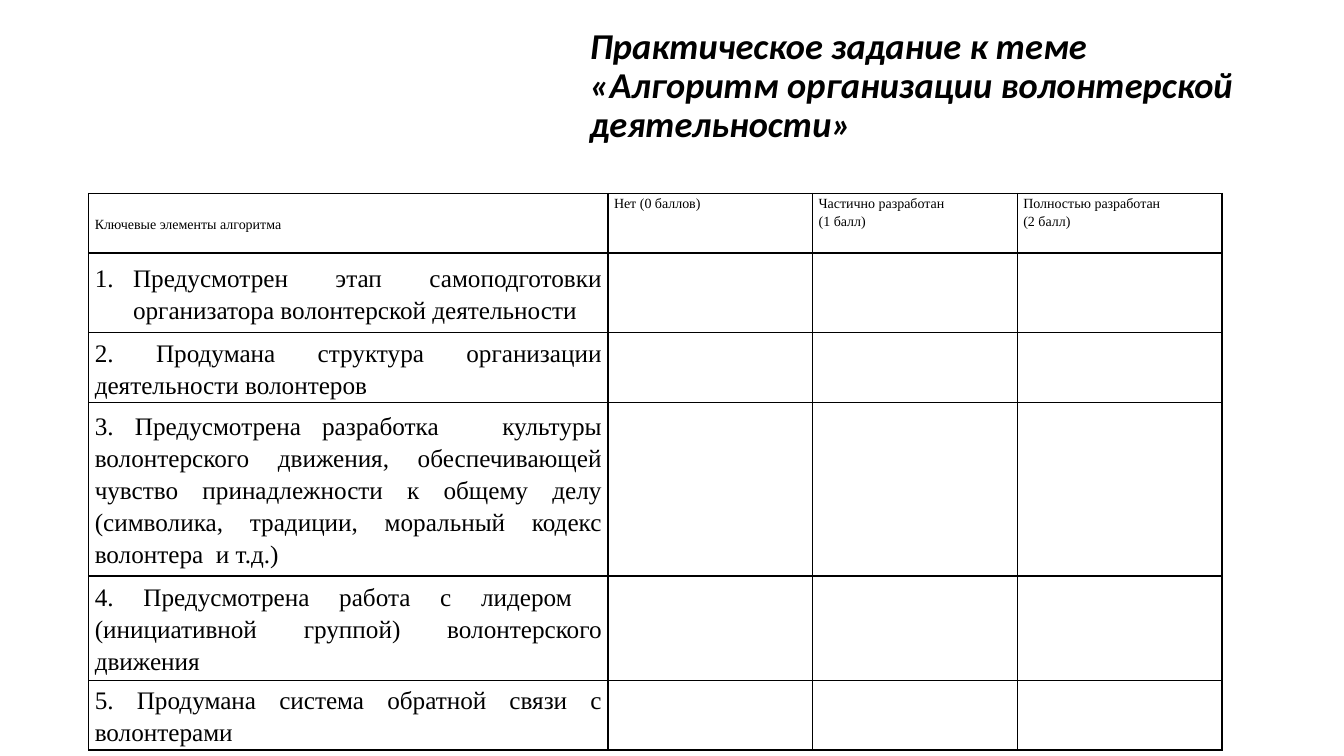
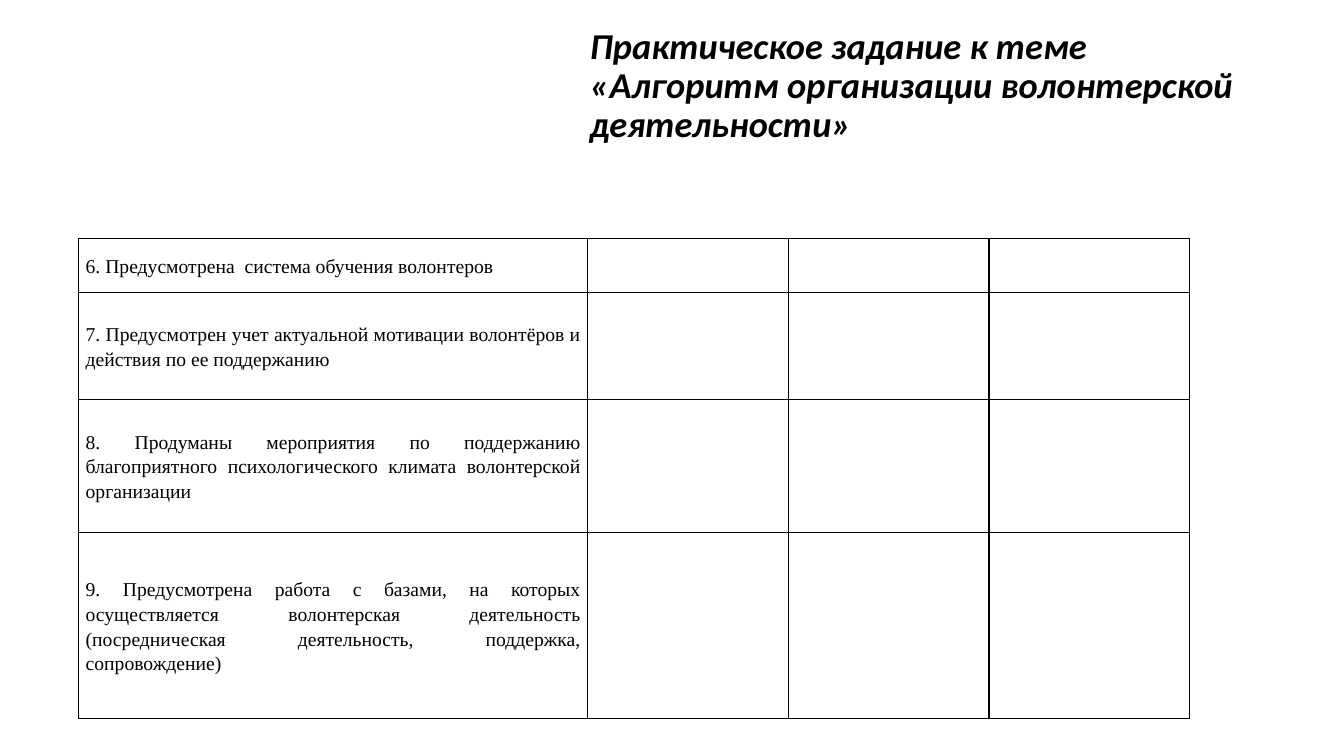
import pptx
import pptx.dml.color
import pptx.enum.text
import pptx.oxml
import pptx.oxml.ns
import pptx.util
from dataclasses import dataclass

Inches = pptx.util.Inches
Pt = pptx.util.Pt
ALIGN = pptx.enum.text.PP_ALIGN
ANCHOR = pptx.enum.text.MSO_ANCHOR


@dataclass(frozen=True)
class Theme:
    ink: str = "000000"
    title_font: str = "Calibri"
    table_font: str = "Times New Roman"
    title_size: int = 26
    header_size: int = 10
    large_size: int = 18
    small_size: int = 14
    title_spacing: float = 0.9
    table_spacing: float = 1.15
    border_width: int = 1


THEME = Theme()
SLIDE_WIDTH, SLIDE_HEIGHT = 13.33, 7.5
ANSWER_COLUMNS = 3
TITLE = "Практическое задание к теме «Алгоритм организации волонтерской деятельности»"
HEADER = [
    "Ключевые элементы алгоритма",
    "Нет (0 баллов)",
    "Частично разработан\n(1 балл)",
    "Полностью разработан\n(2 балл)",
]
FIRST_ITEMS = [
    "Предусмотрен этап самоподготовки организатора волонтерской деятельности",
    "2. Продумана структура организации деятельности волонтеров",
    "3. Предусмотрена разработка   культуры волонтерского движения, обеспечивающей чувство "
    "принадлежности к общему делу (символика, традиции, моральный кодекс волонтера  и т.д.)",
    "4. Предусмотрена работа с лидером  (инициативной группой) волонтерского движения",
    "5. Продумана система обратной связи с волонтерами",
]
LAST_ITEMS = [
    "6. Предусмотрена  система обучения волонтеров",
    "7. Предусмотрен учет актуальной мотивации волонтёров и действия по ее поддержанию",
    "8. Продуманы мероприятия по поддержанию благоприятного психологического климата "
    "волонтерской организации",
    "9. Предусмотрена работа с базами, на которых осуществляется волонтерская деятельность "
    "(посредническая деятельность, поддержка, сопровождение)",
]


def style_text(text_frame, font, size, spacing, align=ALIGN.LEFT, emphasis=False):
    for para in text_frame.paragraphs:
        para.alignment = align
        para.line_spacing = spacing
        for span in para.runs:
            span.font.name = font
            span.font.size = Pt(size)
            span.font.bold = span.font.italic = emphasis
            span.font.color.rgb = pptx.dml.color.RGBColor.from_string(THEME.ink)


def add_title(page):
    box = page.shapes.add_textbox(Inches(0.43 * SLIDE_WIDTH), Inches(0.03 * SLIDE_HEIGHT),
                                  Inches(7), Inches(0.57))
    frame = box.text_frame
    frame.word_wrap = True
    frame.margin_left = Inches(0.12)
    frame.text = TITLE
    style_text(frame, THEME.title_font, THEME.title_size, THEME.title_spacing, emphasis=True)


def add_borders(cell):
    properties = cell._tc.get_or_add_tcPr()
    for side in "LRTB":
        properties.append(pptx.oxml.parse_xml(
            f'<a:ln{side} {pptx.oxml.ns.nsdecls("a")} w="{Pt(THEME.border_width)}">'
            f'<a:solidFill><a:srgbClr val="{THEME.ink}"/></a:solidFill></a:ln{side}>'))


def number_paragraph(para, indent):
    """Give the paragraph an automatic number with a hanging indent."""
    properties = para._p.get_or_add_pPr()
    properties.set("marL", str(Inches(indent)))
    properties.set("indent", str(-Inches(indent)))
    properties.append(pptx.oxml.parse_xml(
        f'<a:buAutoNum {pptx.oxml.ns.nsdecls("a")} type="arabicPeriod"/>'))


def fill_cell(cell, text, size, margin, align=ALIGN.JUSTIFY, anchor=ANCHOR.MIDDLE):
    cell.margin_left = cell.margin_right = Inches(margin)
    cell.margin_top = cell.margin_bottom = 0
    cell.vertical_anchor = anchor
    cell.text_frame.text = text
    style_text(cell.text_frame, THEME.table_font, size, THEME.table_spacing, align)


def add_checklist(page, left, top, item_width, answer_width, heights, items, size, margin,
                  header=()):
    """Add a table with items in the first column and empty answer columns."""
    widths = [item_width] + [answer_width] * ANSWER_COLUMNS
    table = page.shapes.add_table(len(heights), len(widths), Inches(left), Inches(top),
                                  Inches(sum(widths)), Inches(sum(heights))).table
    table.first_row = table.horz_banding = False
    for column, width in zip(table.columns, widths):
        column.width = Inches(width)
    for row, height in zip(table.rows, heights):
        row.height = Inches(height)
    for cell in table.iter_cells():
        add_borders(cell)
        cell.fill.background()
    for index, text in enumerate(header):
        if index == 0:
            fill_cell(table.cell(0, index), text, THEME.header_size, margin)
        else:
            fill_cell(table.cell(0, index), text, THEME.header_size, margin,
                      ALIGN.LEFT, ANCHOR.TOP)
    for index, text in enumerate(items, start=1 if header else 0):
        fill_cell(table.cell(index, 0), text, size, margin)
    return table


def main():
    deck = pptx.Presentation()
    deck.slide_width, deck.slide_height = Inches(SLIDE_WIDTH), Inches(SLIDE_HEIGHT)
    first_page, last_page = [deck.slides.add_slide(deck.slide_layouts[6]) for _ in range(2)]
    for page in (first_page, last_page):
        add_title(page)

    table = add_checklist(first_page, 0.88, 1.92, 5.15, 2.03,
                          [0.59, 0.79, 0.59, 1.39, 0.79, 0.59],
                          FIRST_ITEMS, THEME.large_size, 0.06, HEADER)
    number_paragraph(table.cell(1, 0).text_frame.paragraphs[0], indent=0.38)
    add_checklist(last_page, 0.78, 2.37, 5.05, 1.99, [0.53, 1.06, 1.32, 1.85],
                  LAST_ITEMS, THEME.small_size, 0.07)
    deck.save("out.pptx")


if __name__ == "__main__":
    main()
